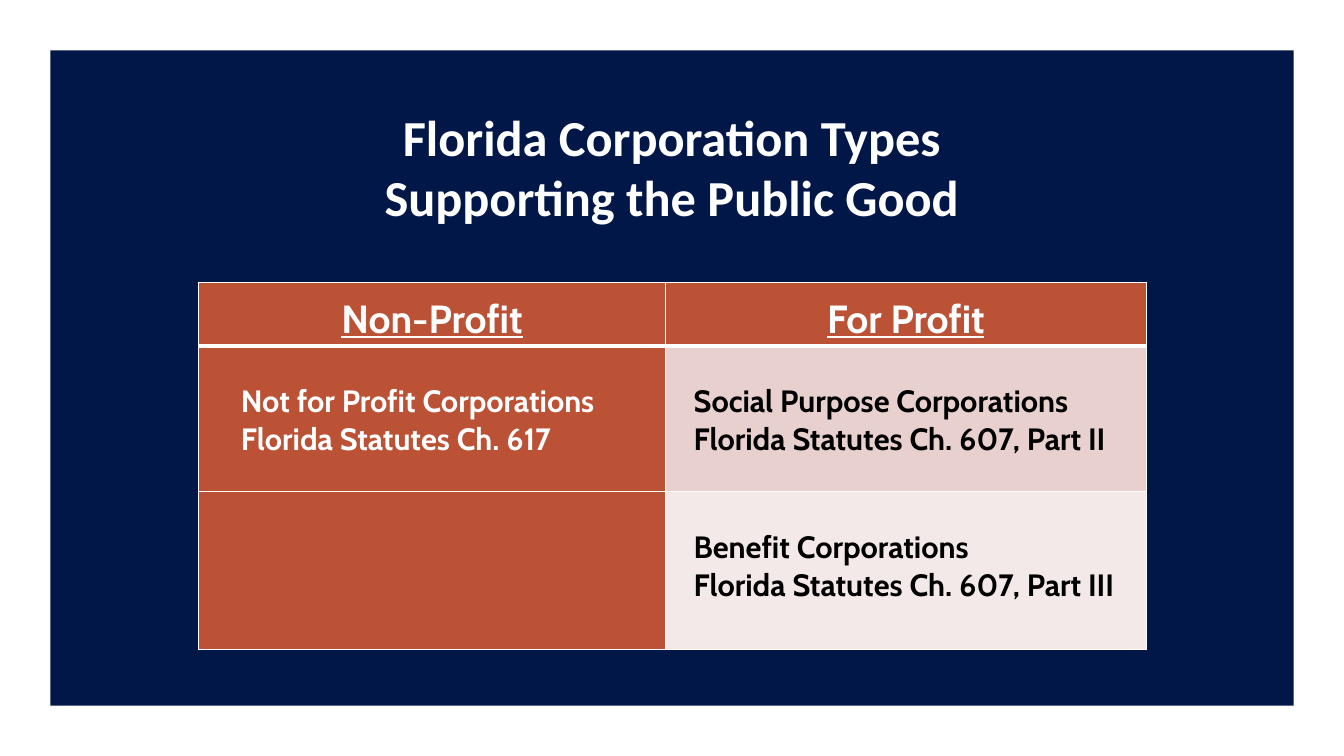
from lxml.etree import SubElement
from pptx import Presentation
from pptx.dml.color import RGBColor
from pptx.enum.shapes import MSO_SHAPE
from pptx.enum.text import MSO_ANCHOR, PP_ALIGN
from pptx.oxml.ns import qn
from pptx.util import Inches, Pt

TITLE = ["Florida Corporation Types", "Supporting the Public Good"]
HEADS = ["Non-Profit", "For Profit"]
ROWS = [
    [["Not for Profit Corporations", "Florida Statutes Ch. 617"],
     ["Social Purpose Corporations", "Florida Statutes Ch. 607, Part II"]],
    [[], ["Benefit Corporations", "Florida Statutes Ch. 607, Part III"]],
]
WIDTHS = [4.63, 4.77]
HEIGHTS = [0.63, 1.45, 1.56]
INDENTS = [0.42, 0.28]


class Theme:
    navy, rust, white, black = "001748", "BB5135", "FFFFFF", "000000"
    tints = ["E7D0CE", "F3E9E8"]
    title_font, table_font = "Calibri", "Cabin"
    title_size, head_size, body_size = 36, 28, 22
    thin, thick = 1, 3


def paint(fill, color):
    fill.solid()
    fill.fore_color.rgb = RGBColor.from_string(color)


def write(frame, lines, font, size, color, align=PP_ALIGN.LEFT, under=False):
    for i, line in enumerate(lines):
        para = frame.add_paragraph() if i else frame.paragraphs[0]
        para.alignment = align
        run = para.add_run()
        run.text = line
        run.font.name = font
        run.font.size = Pt(size)
        run.font.bold = True
        run.font.underline = under
        run.font.color.rgb = RGBColor.from_string(color)


def border(cell, top, bottom):
    """Draw white cell edges; they must come before the fill in tcPr."""
    props = cell._tc.get_or_add_tcPr()
    edges = {"lnL": Theme.thin, "lnR": Theme.thin, "lnT": top, "lnB": bottom}
    for i, (tag, width) in enumerate(edges.items()):
        line = SubElement(props, qn(f"a:{tag}"), w=str(Pt(width)))
        solid = SubElement(line, qn("a:solidFill"))
        SubElement(solid, qn("a:srgbClr"), val=Theme.white)
        props.insert(i, line)


def add_panel(slide):
    panel = slide.shapes.add_shape(MSO_SHAPE.RECTANGLE, Inches(0.5), Inches(0.5),
                                   Inches(12.33), Inches(6.5))
    panel.shadow.inherit = False
    paint(panel.fill, Theme.navy)
    panel.line.fill.background()


def add_title(slide):
    box = slide.shapes.add_textbox(Inches(1.15), Inches(0.99), Inches(11.03), Inches(1.31))
    frame = box.text_frame
    frame.word_wrap = True
    frame.vertical_anchor = MSO_ANCHOR.BOTTOM
    write(frame, TITLE, Theme.title_font, Theme.title_size, Theme.white, PP_ALIGN.CENTER)


def style(cell, fill, left, top):
    cell.margin_left, cell.margin_right = Inches(left), Inches(0.07)
    cell.margin_top, cell.margin_bottom = Inches(top), 0
    paint(cell.fill, fill)


def add_grid(slide):
    grid = slide.shapes.add_table(len(HEIGHTS), len(WIDTHS), Inches(1.97), Inches(2.8),
                                  Inches(sum(WIDTHS)), Inches(sum(HEIGHTS))).table
    for row, height in zip(grid.rows, HEIGHTS):
        row.height = Inches(height)
    for c, width in enumerate(WIDTHS):
        grid.columns[c].width = Inches(width)
        head = grid.cell(0, c)
        style(head, Theme.rust, 0.07, 0.13)
        border(head, Theme.thin, Theme.thick)
        write(head.text_frame, [HEADS[c]], Theme.table_font, Theme.head_size,
              Theme.white, PP_ALIGN.CENTER, True)
        for r, row in enumerate(ROWS):
            cell = grid.cell(r + 1, c)
            style(cell, Theme.tints[r] if c else Theme.rust, INDENTS[c], 0.37)
            border(cell, Theme.thin if r else Theme.thick, Theme.thin)
            write(cell.text_frame, row[c], Theme.table_font, Theme.body_size,
                  Theme.black if c else Theme.white)


def main():
    deck = Presentation()
    deck.slide_width, deck.slide_height = Inches(13.33), Inches(7.5)
    slide = deck.slides.add_slide(deck.slide_layouts[6])
    add_panel(slide)
    add_title(slide)
    add_grid(slide)
    deck.save("out.pptx")


if __name__ == "__main__":
    main()
